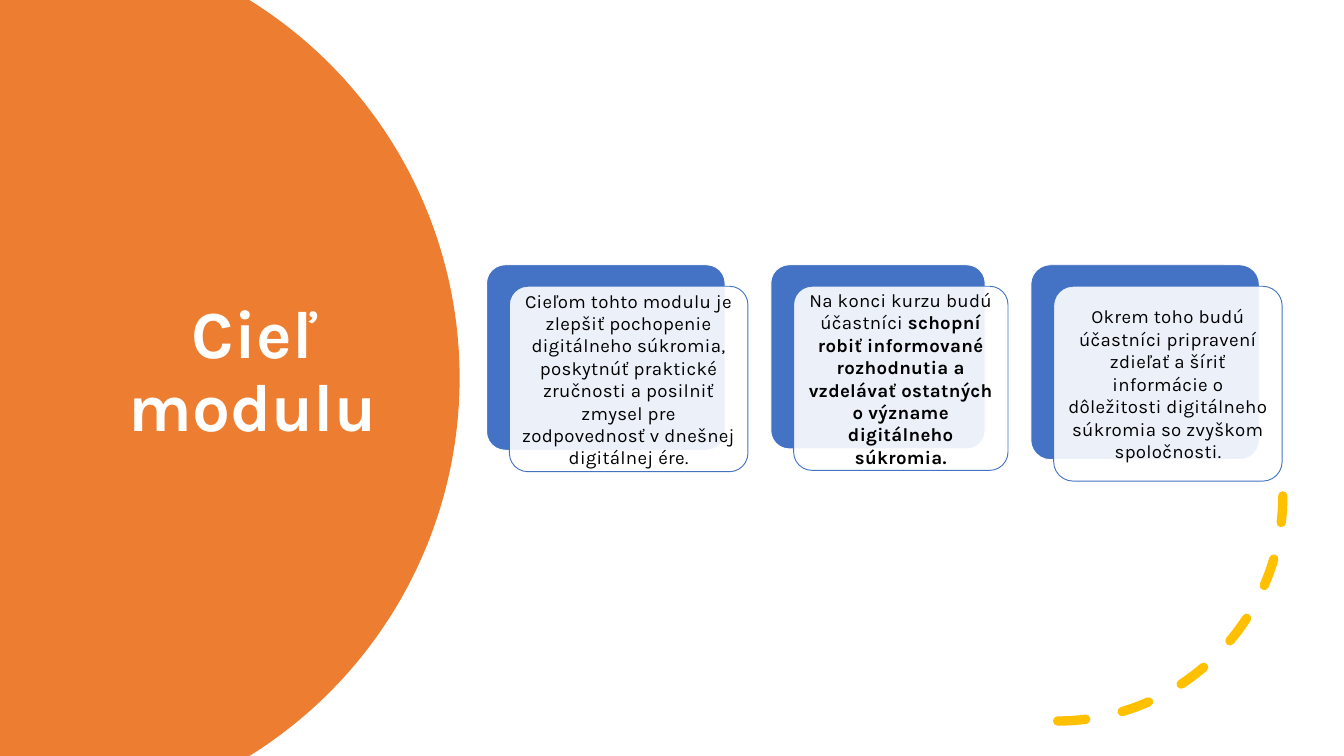
from math import asin, cos, pi, sin

from lxml.etree import SubElement
from pptx import Presentation
from pptx.dml.color import RGBColor
from pptx.enum.dml import MSO_LINE
from pptx.enum.shapes import MSO_SHAPE
from pptx.enum.text import MSO_ANCHOR, PP_ALIGN
from pptx.oxml.ns import qn
from pptx.util import Inches, Pt

COLORS = {"orange": "ED7D31", "blue": "4472C4", "yellow": "FFC000",
          "white": "FFFFFF", "black": "000000"}
COLS, ROWS, CELL = 80, 45, 0.25  # square grid cells, in inches
CARD_TOP, SHIFT_X, SHIFT_Y, INSET = 15.76, 1.36, 1.28, 0.33

# left column, width, height, runs as (text, bold)
CARDS = [
    (28.96, 14.2, 11.04, [
        ("Cieľom tohto modulu je zlepšiť pochopenie digitálneho súkromia, "
         "poskytnúť praktické zručnosti a posilniť zmysel pre zodpovednosť "
         "v dnešnej digitálnej ére.", False)]),
    (45.88, 12.76, 10.96, [
        ("Na konci kurzu budú účastníci ", False),
        ("schopní robiť informované rozhodnutia a vzdelávať ostatných "
         "o význame digitálneho súkromia.", True)]),
    (61.36, 13.6, 11.6, [
        ("Okrem toho budú účastníci pripravení zdieľať a šíriť informácie "
         "o dôležitosti digitálneho súkromia so zvyškom spoločnosti.", False)]),
]


def grid(cells):
    return Inches(cells * CELL)


def rgb(name):
    return RGBColor.from_string(COLORS[name])


class Deck:
    """Holds the style and the current slide; lengths are grid cells."""

    font = "Karla"

    def __init__(self, prs):
        self.s = prs.slides.add_slide(prs.slide_layouts[6])

    def paint(self, sp, fill=None, line=None, width=1, opacity=100):
        sp.shadow.inherit = False
        if fill:
            sp.fill.solid()
            sp.fill.fore_color.rgb = rgb(fill)
            if opacity < 100:
                color = sp.fill._xPr.find(qn("a:solidFill"))[0]
                SubElement(color, qn("a:alpha"), val=str(opacity * 1000))
        else:
            sp.fill.background()
        if line:
            sp.line.color.rgb = rgb(line)
            sp.line.width = Pt(width)
        else:
            sp.line.fill.background()

    def shape(self, kind, x, y, w, h, **style):
        sp = self.s.shapes.add_shape(kind, grid(x), grid(y), grid(w), grid(h))
        self.paint(sp, **style)
        return sp

    def text(self, x, y, w, h, runs, size, color, inset=0.1, spacing=1.0, tracking=None):
        sp = self.s.shapes.add_textbox(grid(x), grid(y), grid(w), grid(h))
        tf = sp.text_frame
        tf.word_wrap = True
        tf.vertical_anchor = MSO_ANCHOR.MIDDLE
        tf.margin_left = tf.margin_right = Inches(inset)
        tf.margin_top = tf.margin_bottom = Inches(min(inset, 0.08))
        p = tf.paragraphs[0]
        p.alignment = PP_ALIGN.CENTER
        p.line_spacing = spacing
        for words, bold in runs:
            r = p.add_run()
            r.text = words
            r.font.name, r.font.size, r.font.bold = self.font, Pt(size), bold
            r.font.color.rgb = rgb(color)
            if tracking:
                r.font._element.set("spc", str(int(tracking * 100)))

    def cropped_disc(self, center_x, radius, fill, steps=96):
        """Draw the part of a vertically centred disc that lies on the slide."""
        middle = ROWS / 2
        edge = asin(middle / radius)
        angles = [edge * (2 * i / steps - 1) for i in range(steps + 1)]
        arc = [(grid(center_x + radius * cos(a)), grid(middle + radius * sin(a)))
               for a in angles]
        outline = self.s.shapes.build_freeform(0, 0)
        outline.add_line_segments(arc + [(0, grid(ROWS))], close=True)
        self.paint(outline.convert_to_shape(), fill)

    def dashed_arc(self, x, y, size, color, width):
        """Draw the lower right quarter of a circle."""
        sp = self.shape(MSO_SHAPE.ARC, x, y, size, size, line=color, width=width)
        sp._element.spPr.find(qn("a:xfrm")).set("flipV", "1")
        sp.line.dash_style = MSO_LINE.DASH
        sp.line._ln.set("cap", "rnd")

    def card(self, x, y, w, h, runs):
        back = self.shape(MSO_SHAPE.ROUNDED_RECTANGLE, x, y, w, h,
                          fill="blue", line="white")
        x, y = x + SHIFT_X, y + SHIFT_Y
        front = self.shape(MSO_SHAPE.ROUNDED_RECTANGLE, x, y, w, h,
                           fill="white", line="blue", opacity=90)
        for sp in (back, front):
            sp.adjustments[0] = 0.1
        self.text(x + INSET, y + INSET, w - 2 * INSET, h - 2 * INSET, runs,
                  20, "black", inset=0.08, tracking=0.3)


def main():
    prs = Presentation()
    prs.slide_width, prs.slide_height = grid(COLS), grid(ROWS)
    deck = Deck(prs)
    deck.cropped_disc(0.88, 26.48, "orange")
    deck.text(4.52, 7.56, 21, 29.28, [("Cieľ modulu", True)], 72, "white", spacing=0.9)
    deck.dashed_arc(49.56, 16.12, 26.8, "yellow", 10)
    for x, w, h, runs in CARDS:
        deck.card(x, CARD_TOP, w, h, runs)
    prs.save("out.pptx")


if __name__ == "__main__":
    main()
